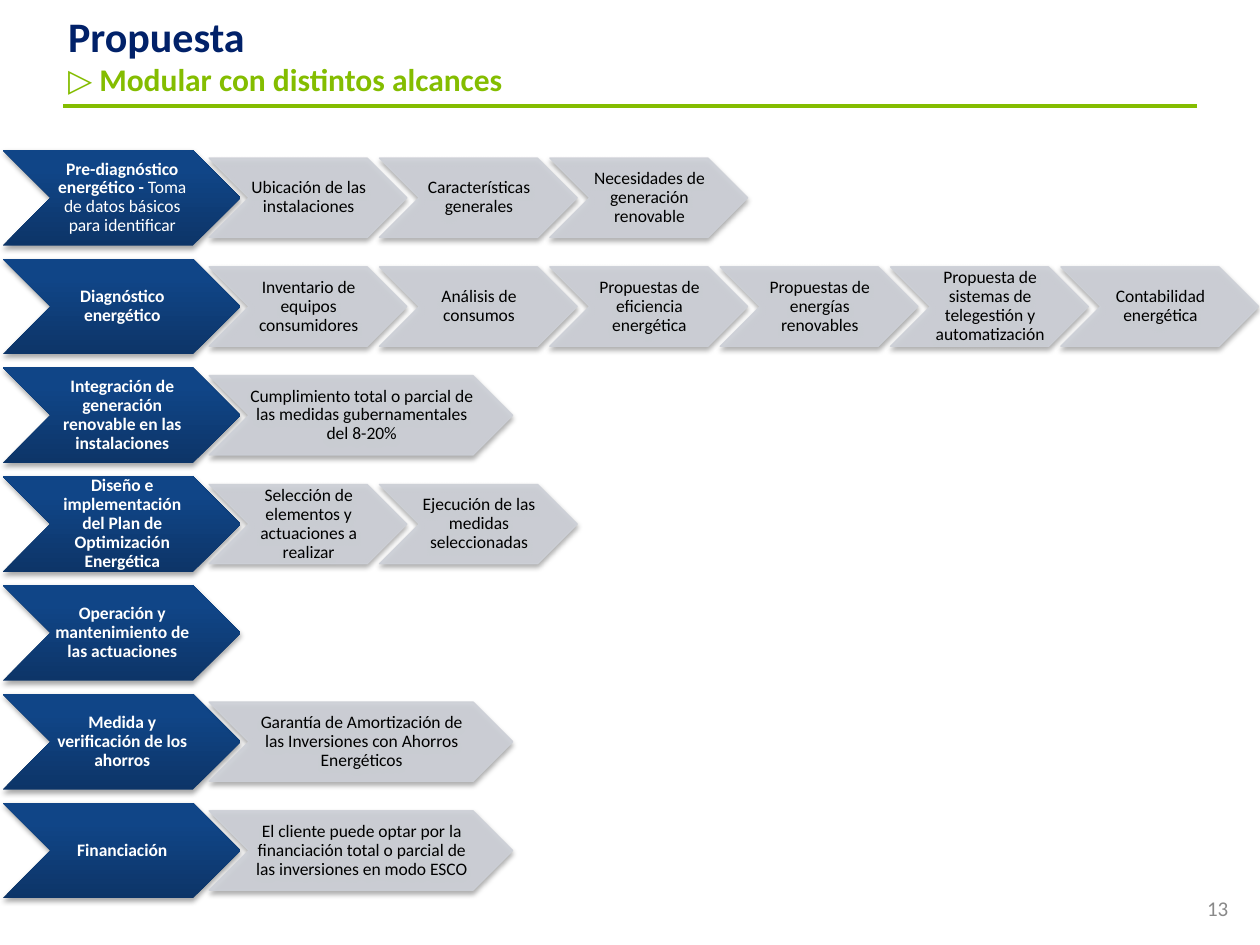
from copy import deepcopy

from lxml.etree import SubElement
from pptx import Presentation
from pptx.dml.color import RGBColor
from pptx.enum.shapes import MSO_CONNECTOR, MSO_SHAPE
from pptx.enum.text import MSO_ANCHOR, PP_ALIGN
from pptx.oxml.ns import qn
from pptx.util import Inches, Pt

NAVY = RGBColor(0x01, 0x21, 0x69)
GREEN = RGBColor(0x84, 0xBD, 0x00)
SILVER = RGBColor(0xCD, 0xD0, 0xD7)
GRAY = RGBColor(0x89, 0x89, 0x89)
WHITE = RGBColor(0xFF, 0xFF, 0xFF)
BLACK = RGBColor(0x00, 0x00, 0x00)
BLUES = [
    (0, RGBColor(0x0D, 0x35, 0x68)),
    (0.8, RGBColor(0x10, 0x45, 0x87)),
    (1, RGBColor(0x0E, 0x45, 0x8A)),
]
FONT = "Calibri"

ROW_TOP, ROW_PITCH = 1.19, 5.18 / 6
PHASE_LEFT, PHASE_WIDTH, PHASE_HEIGHT = 0.02, 1.89, 0.76
STEP_LEFT, STEP_PITCH, STEP_HEIGHT = 1.66, 1.352, 0.63
NARROW, WIDE = 1.57, 2.41

ROWS = [
    ("Pre-diagnóstico energético - ", "Toma de datos básicos para identificar", NARROW,
     ["Ubicación de las instalaciones", "Características generales",
      "Necesidades de generación renovable"]),
    ("Diagnóstico energético", "", NARROW,
     ["Inventario de equipos consumidores", "Análisis de consumos",
      "Propuestas de eficiencia energética", "Propuestas de energías renovables",
      "Propuesta de sistemas de telegestión y automatización",
      "Contabilidad energética"]),
    ("Integración de generación renovable en las instalaciones", "", WIDE,
     ["Cumplimiento total o parcial de las medidas gubernamentales del 8-20%"]),
    ("Diseño e implementación del Plan de Optimización Energética", "", NARROW,
     ["Selección de elementos y actuaciones a realizar",
      "Ejecución de las medidas seleccionadas"]),
    ("Operación y mantenimiento de las actuaciones", "", NARROW, []),
    ("Medida y verificación de los ahorros", "", WIDE,
     ["Garantía de Amortización de las Inversiones con Ahorros Energéticos"]),
    ("Financiación", "", WIDE,
     ["El cliente puede optar por la financiación total o parcial de las "
      "inversiones en modo ESCO"]),
]


def add_chevron(left, top, width, height, color):
    chevron = page.shapes.add_shape(
        MSO_SHAPE.CHEVRON, Inches(left), Inches(top), Inches(width), Inches(height))
    frame = chevron.text_frame
    frame.word_wrap = True
    frame.vertical_anchor = MSO_ANCHOR.MIDDLE
    frame.margin_left = frame.margin_top = frame.margin_bottom = Inches(0.01)
    frame.margin_right = 0
    para = frame.paragraphs[0]
    para.alignment = PP_ALIGN.CENTER
    para.line_spacing = 0.9
    para.font.name = FONT
    para.font.size = Pt(10)
    para.font.color.rgb = color
    return chevron, para


def add_shadow(shape):
    shape.shadow.inherit = False
    effects = shape._element.spPr.find(qn("a:effectLst"))
    shadow = SubElement(effects, qn("a:outerShdw"), blurRad=str(Pt(3.1)),
                        dist=str(Pt(1.8)), dir="5400000", rotWithShape="0")
    tint = SubElement(shadow, qn("a:srgbClr"), val=str(BLACK))
    SubElement(tint, qn("a:alpha"), val="35000")


deck = Presentation()
deck.slide_width, deck.slide_height = Inches(10), Inches(7.5)
page = deck.slides.add_slide(deck.slide_layouts[5])

rule = page.shapes.add_connector(
    MSO_CONNECTOR.STRAIGHT, Inches(9.5), Inches(0.84), Inches(0.5), Inches(0.84))
rule.line.color.rgb = GREEN
rule.line.width = Pt(2.5)
SubElement(rule._element.spPr, qn("a:effectLst"))

title = page.shapes.title
title.left, title.top = Inches(0.44), Inches(0)
title.width, title.height = Inches(8.5), Inches(0.86)
title.text_frame.vertical_anchor = MSO_ANCHOR.MIDDLE
para = title.text_frame.paragraphs[0]
para.alignment = PP_ALIGN.LEFT
para.font.name = FONT
para.font.bold = True
for text, size, color in [("Propuesta", 24, NAVY),
                          ("▷ Modular con distintos alcances", 18, GREEN)]:
    if para.runs:
        para.add_line_break()
    span = para.add_run()
    span.text = text
    span.font.size = Pt(size)
    span.font.color.rgb = color

for row, (phase, detail, step_width, steps) in enumerate(ROWS):
    top = ROW_TOP + row * ROW_PITCH
    chevron, para = add_chevron(PHASE_LEFT, top, PHASE_WIDTH, PHASE_HEIGHT, WHITE)
    chevron.fill.gradient()
    chevron.fill.gradient_angle = 90
    stop_list = chevron._element.spPr.find(".//" + qn("a:gsLst"))
    stop_list.append(deepcopy(stop_list[-1]))
    for stop, (position, color) in zip(chevron.fill.gradient_stops, BLUES):
        stop.position = position
        stop.color.rgb = color
    chevron.line.fill.background()
    add_shadow(chevron)
    for text, bold in [(phase, True), (detail, False)]:
        if text:
            span = para.add_run()
            span.text = text
            span.font.bold = bold

    step_top = top + (PHASE_HEIGHT - STEP_HEIGHT) / 2
    for column, step in enumerate(steps):
        chevron, para = add_chevron(
            STEP_LEFT + column * STEP_PITCH, step_top, step_width, STEP_HEIGHT, BLACK)
        chevron.fill.solid()
        chevron.fill.fore_color.rgb = SILVER
        chevron.line.color.rgb = SILVER
        chevron.line.width = Pt(0.75)
        for tint in chevron._element.spPr.iter(qn("a:srgbClr")):
            SubElement(tint, qn("a:alpha"), val="90000")
        add_shadow(chevron)
        para.add_run().text = step

number = page.shapes.add_textbox(Inches(9.33), Inches(7.06), Inches(0.67), Inches(0.4))
number.text_frame.word_wrap = True
para = number.text_frame.paragraphs[0]
para.text = "13"
para.alignment = PP_ALIGN.CENTER
para.font.name = FONT
para.font.size = Pt(12)
para.font.color.rgb = GRAY

deck.save("out.pptx")
